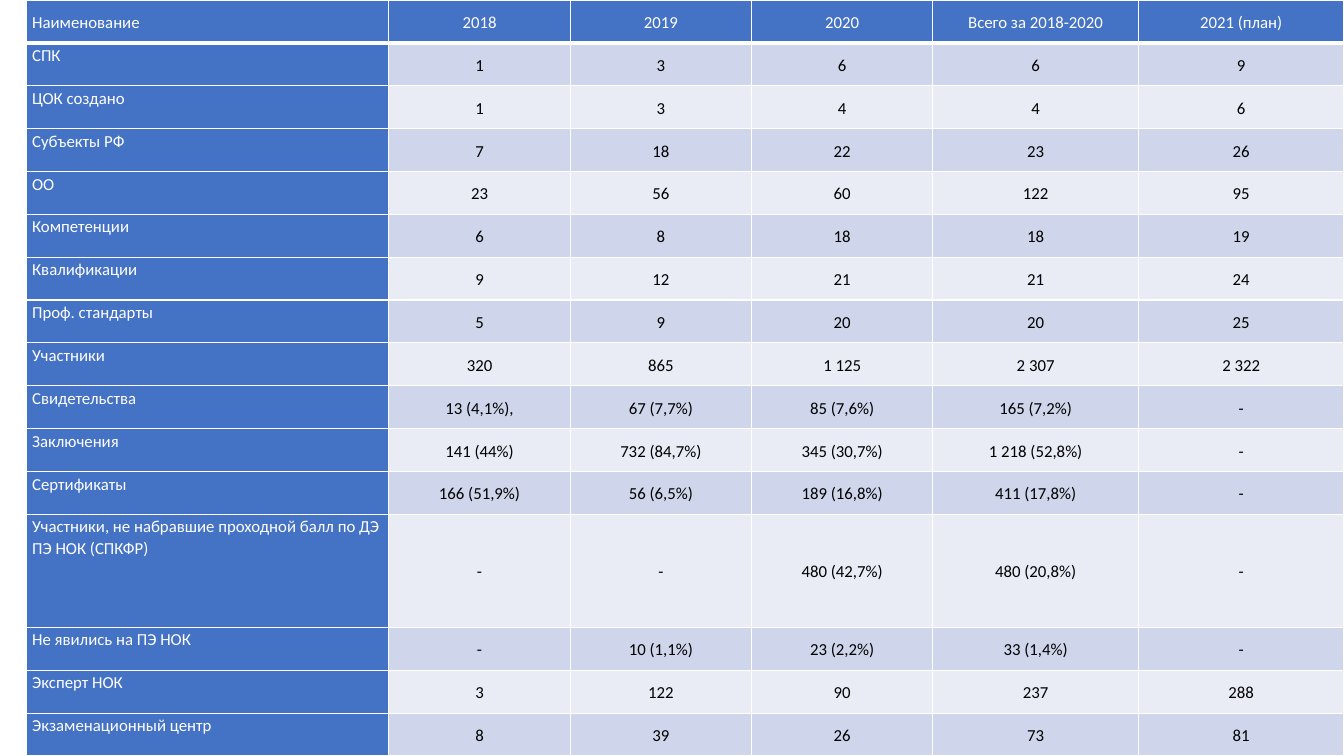
from dataclasses import dataclass

from lxml import etree
from pptx import Presentation
from pptx.dml.color import RGBColor
from pptx.enum.text import MSO_ANCHOR, PP_ALIGN
from pptx.oxml.ns import qn
from pptx.util import Cm, Pt

TOP, MIDDLE = MSO_ANCHOR.TOP, MSO_ANCHOR.MIDDLE
LEFT, CENTER = PP_ALIGN.LEFT, PP_ALIGN.CENTER

SLIDE_SIZE = (33.87, 19.05)
TABLE_LEFT = 0.66
COLUMN_WIDTHS = [9.14] + [4.57] * 3 + [5.18] * 2
ROW_HEIGHT, TALL_ROW_HEIGHT = 1.08, 2.85
TALL_ROW = 12

INDICATORS = [
    ["Наименование", "2018", "2019", "2020", "Всего за 2018-2020", "2021 (план)"],
    ["СПК", "1", "3", "6", "6", "9"],
    ["ЦОК создано", "1", "3", "4", "4", "6"],
    ["Субъекты РФ", "7", "18", "22", "23", "26"],
    ["ОО", "23", "56", "60", "122", "95"],
    ["Компетенции", "6", "8", "18", "18", "19"],
    ["Квалификации", "9", "12", "21", "21", "24"],
    ["Проф. стандарты", "5", "9", "20", "20", "25"],
    ["Участники", "320", "865", "1 125", "2 307", "2 322"],
    ["Свидетельства", "13 (4,1%),", "67 (7,7%)", "85 (7,6%)", "165 (7,2%)", "-"],
    ["Заключения", "141 (44%)", "732 (84,7%)", "345 (30,7%)", "1 218 (52,8%)", "-"],
    ["Сертификаты", "166 (51,9%)", "56 (6,5%)", "189 (16,8%)", "411 (17,8%)", "-"],
    ["Участники, не набравшие проходной балл по ДЭ ПЭ НОК (СПКФР)",
     "-", "-", "480 (42,7%)", "480 (20,8%)", "-"],
    ["Не явились на ПЭ НОК", "-", "10 (1,1%)", "23 (2,2%)", "33 (1,4%)", "-"],
    ["Эксперт НОК", "3", "122", "90", "237", "288"],
    ["Экзаменационный центр", "8", "39", "26", "73", "81"],
]


@dataclass(frozen=True)
class Theme:
    font: str = "Calibri"
    text_size: float = 12
    heading_fill: str = "4472C4"
    heading_text: str = "FFFFFF"
    body_text: str = "000000"
    bands: tuple = ("CFD5EA", "E9EBF5")
    border: str = "FFFFFF"
    border_width: float = 1
    header_rule_width: float = 3


def apply_format(target, values):
    for attribute, value in values.items():
        setattr(target, attribute, value)


class SlideBuilder:
    def __init__(self, slide, theme):
        self.slide = slide
        self.theme = theme

    def table(self, rows, left, top, widths, heights):
        frame = self.slide.shapes.add_table(
            len(rows), len(widths), Cm(left), Cm(top), Cm(sum(widths)), Cm(sum(heights)))
        grid = frame.table
        grid.first_col = True
        for column, width in zip(grid.columns, widths):
            column.width = Cm(width)
        for row, height in zip(grid.rows, heights):
            row.height = Cm(height)
        for row_index, texts in enumerate(rows):
            for column_index, text in enumerate(texts):
                self.cell(grid.cell(row_index, column_index), text, row_index, column_index)

    def cell(self, cell, text, row_index, column_index):
        theme = self.theme
        is_header, is_label = row_index == 0, column_index == 0
        is_heading = is_header or is_label
        apply_format(cell, {
            "text": text,
            "margin_left": Cm(0.15), "margin_right": Cm(0.15),
            "margin_top": Cm(0.03), "margin_bottom": Cm(0),
            "vertical_anchor": TOP if is_label and not is_header else MIDDLE,
        })
        paragraph = cell.text_frame.paragraphs[0]
        apply_format(paragraph, {
            "alignment": LEFT if is_label else CENTER,
            "line_spacing": 1.07, "space_after": Pt(8),
        })
        font = paragraph.runs[0].font
        apply_format(font, {"name": theme.font, "size": Pt(theme.text_size), "bold": False})
        font.color.rgb = RGBColor.from_string(
            theme.heading_text if is_heading else theme.body_text)
        self.borders(cell, theme.header_rule_width if is_header else theme.border_width)
        band = theme.bands[(row_index - 1) % len(theme.bands)]
        cell.fill.solid()
        cell.fill.fore_color.rgb = RGBColor.from_string(
            theme.heading_fill if is_heading else band)

    def borders(self, cell, bottom_width):
        """Outline a cell; call before filling it, since borders precede the fill in the XML."""
        properties = cell._tc.get_or_add_tcPr()
        side_width = self.theme.border_width
        for side, width in zip("LRTB", (side_width, side_width, side_width, bottom_width)):
            line = etree.SubElement(properties, qn(f"a:ln{side}"), w=str(Pt(width)))
            solid = etree.SubElement(line, qn("a:solidFill"))
            etree.SubElement(solid, qn("a:srgbClr"), val=self.theme.border)


def main():
    presentation = Presentation()
    presentation.slide_width, presentation.slide_height = map(Cm, SLIDE_SIZE)
    slide = presentation.slides.add_slide(presentation.slide_layouts[6])
    heights = [TALL_ROW_HEIGHT if index == TALL_ROW else ROW_HEIGHT
               for index in range(len(INDICATORS))]
    SlideBuilder(slide, Theme()).table(INDICATORS, TABLE_LEFT, 0, COLUMN_WIDTHS, heights)
    presentation.save("out.pptx")


if __name__ == "__main__":
    main()
